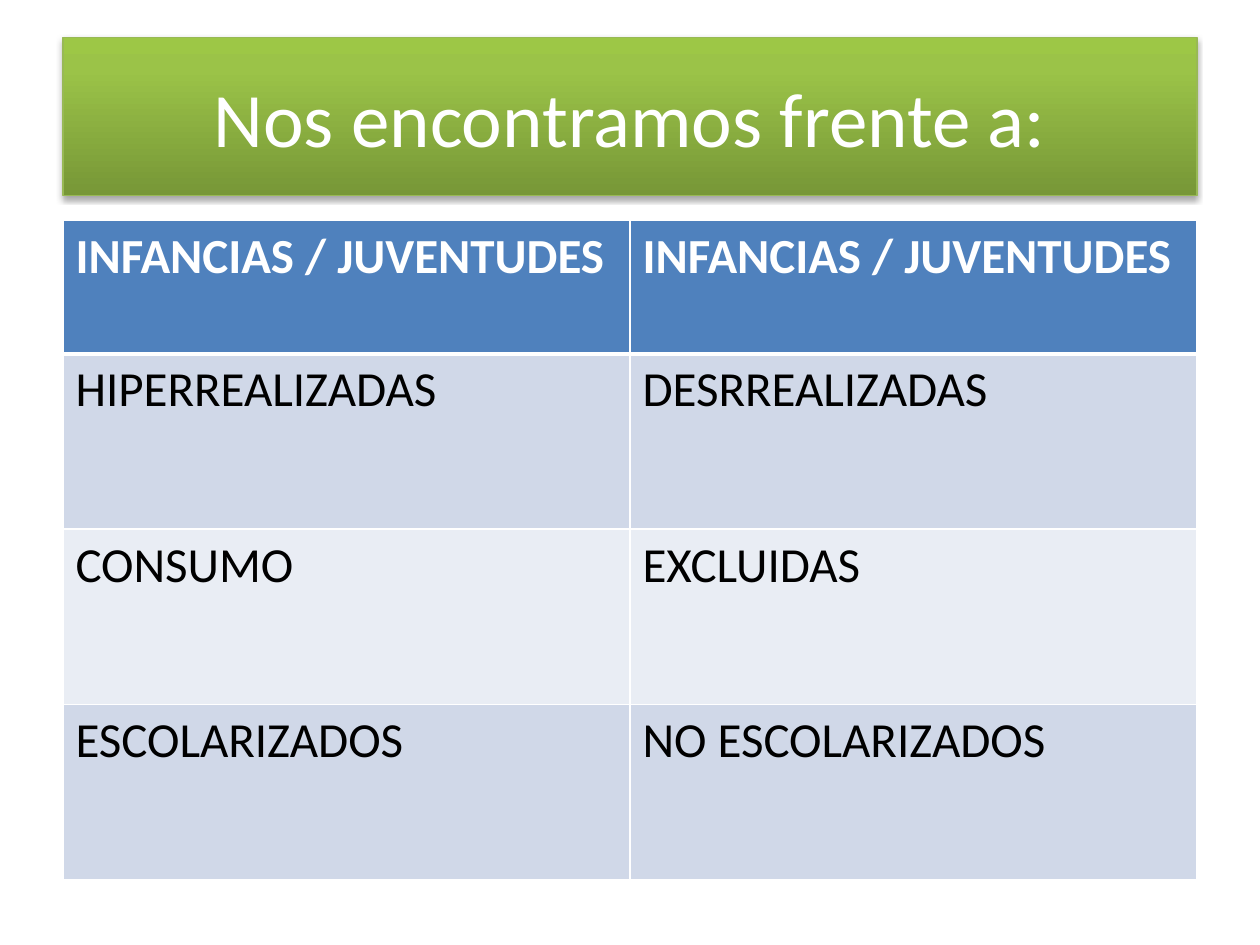
import copy
import pptx
import pptx.dml.color
import pptx.enum.shapes
import pptx.enum.text
import pptx.oxml
import pptx.oxml.ns
import pptx.util
from pptx.dml.color import RGBColor
from pptx.util import Inches, Pt

TITLE = "Nos encontramos frente a:"
ROWS = [
    ("INFANCIAS / JUVENTUDES", "INFANCIAS / JUVENTUDES"),
    ("HIPERREALIZADAS", "DESRREALIZADAS"),
    ("CONSUMO", "EXCLUIDAS"),
    ("ESCOLARIZADOS", "NO ESCOLARIZADOS"),
]
FONT = "Calibri"
WHITE = RGBColor(0xFF, 0xFF, 0xFF)
BLACK = RGBColor(0, 0, 0)
GREEN_EDGE = RGBColor(0x98, 0xB9, 0x55)
HEADER_BLUE = RGBColor(0x4F, 0x81, 0xBD)
BANDS = [RGBColor(0xE9, 0xED, 0xF4), RGBColor(0xD0, 0xD8, 0xE8)]
TITLE_STOPS = [
    (0, RGBColor(0x77, 0x97, 0x37)),
    (0.8, RGBColor(0x9B, 0xC3, 0x48)),
    (1, RGBColor(0x9D, 0xC7, 0x46)),
]
LEFT, WIDTH = 0.5, 9
HEADER_HEIGHT, ROW_HEIGHT = 1.06, 1.39
NAMESPACE = pptx.oxml.ns.nsdecls("a")


def style_text(frame, size, color, bold=False):
    for span in frame.paragraphs[0].runs:
        span.font.name = FONT
        span.font.size = Pt(size)
        span.font.bold = bold
        span.font.color.rgb = color


def add_title(page):
    box = page.shapes.add_shape(
        pptx.enum.shapes.MSO_SHAPE.RECTANGLE,
        Inches(LEFT), Inches(0.3), Inches(WIDTH), Inches(1.25))
    box.fill.gradient()
    box.fill.gradient_angle = 90
    stop_list = box._element.spPr.find(".//" + pptx.oxml.ns.qn("a:gsLst"))
    stop_list.append(copy.deepcopy(stop_list[-1]))
    for stop, (position, color) in zip(box.fill.gradient_stops, TITLE_STOPS):
        stop.position = position
        stop.color.rgb = color
    box.line.color.rgb = GREEN_EDGE
    box.line.width = Pt(0.75)
    box.shadow.inherit = False
    effects = box._element.spPr.find(pptx.oxml.ns.qn("a:effectLst"))
    effects.append(pptx.oxml.parse_xml(
        f'<a:outerShdw {NAMESPACE} blurRad="{Pt(3.1)}" dist="{Pt(1.8)}" '
        'dir="5400000" rotWithShape="0"><a:srgbClr val="000000">'
        '<a:alpha val="35000"/></a:srgbClr></a:outerShdw>'))
    frame = box.text_frame
    frame.word_wrap = True
    frame.vertical_anchor = pptx.enum.text.MSO_ANCHOR.MIDDLE
    frame.text = TITLE
    frame.paragraphs[0].alignment = pptx.enum.text.PP_ALIGN.CENTER
    style_text(frame, 44, WHITE)


def set_borders(cell, widths):
    properties = cell._tc.get_or_add_tcPr()
    for side, width in zip("LRTB", widths):
        properties.append(pptx.oxml.parse_xml(
            f'<a:ln{side} {NAMESPACE} w="{Pt(width)}"><a:solidFill>'
            f'<a:srgbClr val="{WHITE}"/></a:solidFill></a:ln{side}>'))


def add_comparison(page):
    height = HEADER_HEIGHT + ROW_HEIGHT * (len(ROWS) - 1)
    table = page.shapes.add_table(
        len(ROWS), len(ROWS[0]),
        Inches(LEFT), Inches(1.75), Inches(WIDTH), Inches(height)).table
    for index, texts in enumerate(ROWS):
        header = index == 0
        table.rows[index].height = Inches(HEADER_HEIGHT if header else ROW_HEIGHT)
        for column, text in enumerate(texts):
            cell = table.cell(index, column)
            set_borders(cell, (1, 1, 3 if index == 1 else 1, 3 if header else 1))
            cell.fill.solid()
            cell.fill.fore_color.rgb = HEADER_BLUE if header else BANDS[index % 2]
            cell.text_frame.text = text
            style_text(cell.text_frame, 28, WHITE if header else BLACK, header)


def main():
    deck = pptx.Presentation()
    deck.slide_width, deck.slide_height = Inches(10), Inches(7.5)
    page = deck.slides.add_slide(deck.slide_layouts[6])
    add_title(page)
    add_comparison(page)
    deck.save("out.pptx")


if __name__ == "__main__":
    main()
